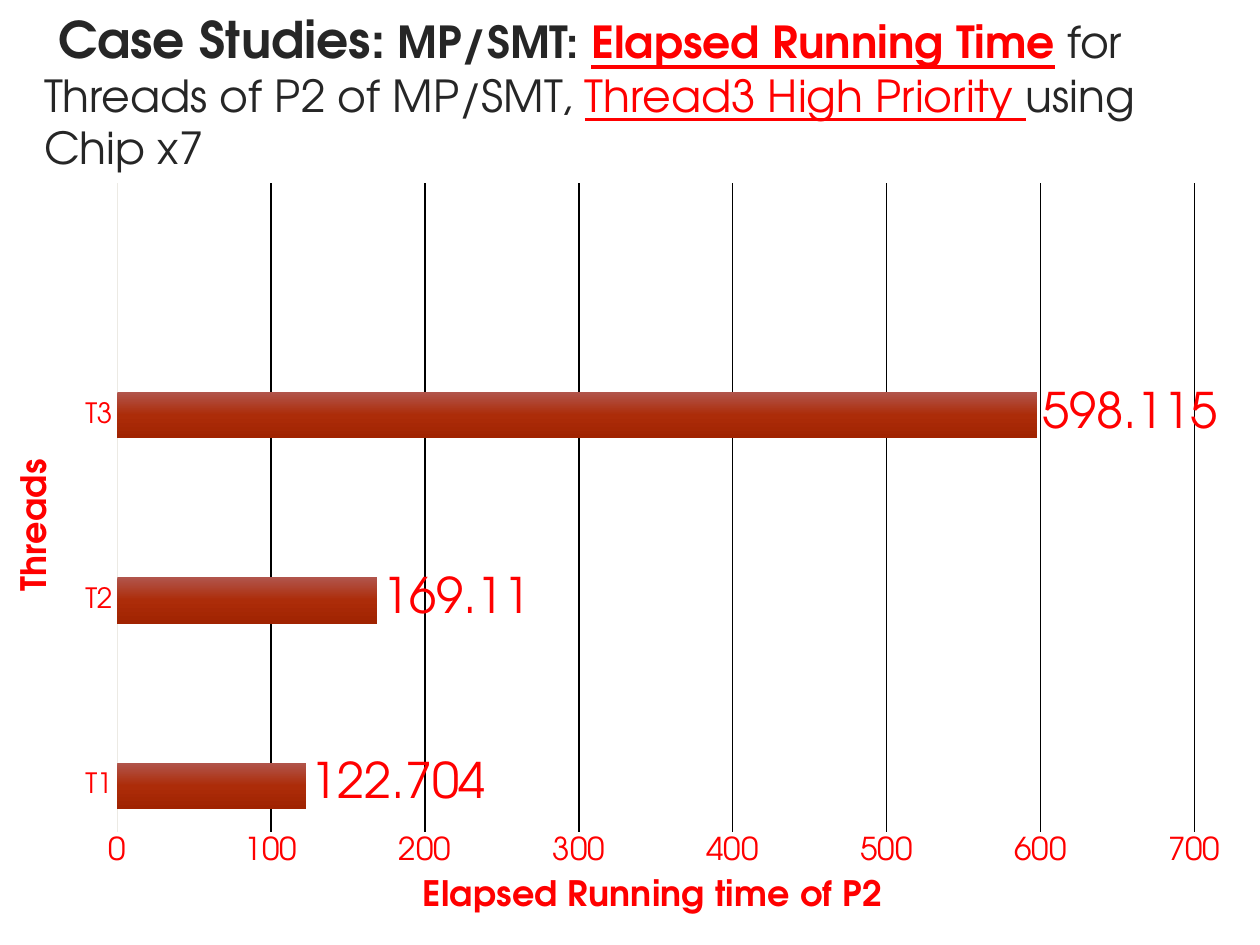
from lxml import etree
from pptx import Presentation
from pptx.chart.data import CategoryChartData
from pptx.dml.color import RGBColor
from pptx.enum import chart as ch, text
from pptx.oxml import parse_xml
from pptx.oxml.ns import nsdecls, qn
from pptx.util import Inches, Pt

FONT = "TeX Gyre Adventor"
RED = RGBColor(0xFF, 0, 0)
DARK = RGBColor(0x26, 0x26, 0x26)
BLACK = RGBColor(0, 0, 0)
AXIS = RGBColor(0xEC, 0xEA, 0xE4)
GRADIENT = [(0, "B1554C"), (50, "AC2C09"), (100, "A02301")]

TITLE = [
    (" Case Studies:", dict(size=Pt(28.8), bold=True, color=DARK)),
    (" MP/SMT: ", dict(bold=True, color=DARK)),
    ("Elapsed Running Time", dict(bold=True, underline=True, color=RED)),
    (" for\vThreads of P2 of MP/SMT, ", dict(color=DARK)),
    ("Thread3 High Priority ", dict(underline=True, color=RED)),
    ("using Chip x7", dict(color=DARK)),
]
THREADS = [("T1", 122.704), ("", None), ("T2", 169.11), ("", None),
           ("T3", 598.115), ("", None), ("", None)]
AXIS_TITLES = ("Threads", "Elapsed Running time of P2")
AXIS_SIZES = (16, 18)
PLOT = dict(x=0.088, y=0.034, w=0.884, h=0.847)


def style(font, size=Pt(25.2), color=BLACK, bold=False, underline=False):
    values = dict(name=FONT, size=size, bold=bold, underline=underline)
    for key, value in values.items():
        setattr(font, key, value)
    font.color.rgb = color


def add_title(s):
    sp = s.shapes.title
    sp.left, sp.top, sp.width, sp.height = map(Inches, (0.25, 0.08, 9.75, 1.5))
    tf = sp.text_frame
    for key, value in dict(word_wrap=True, auto_size=text.MSO_AUTO_SIZE.NONE,
                           vertical_anchor=text.MSO_ANCHOR.TOP).items():
        setattr(tf, key, value)
    p = tf.paragraphs[0]
    p.alignment = text.PP_ALIGN.LEFT
    p.line_spacing = Pt(30)
    for content, look in TITLE:
        for i, part in enumerate(content.split("\v")):
            if i:
                p.add_line_break()
            r = p.add_run()
            r.text = part
            style(r.font, **look)


def add_bars(s):
    data = CategoryChartData()
    data.categories = [name for name, _ in THREADS]
    data.add_series("Series 1", [value for _, value in THREADS])
    chart = s.shapes.add_chart(ch.XL_CHART_TYPE.BAR_CLUSTERED,
                               *map(Inches, (0.08, 1.25, 9.67, 6.08)), data).chart
    chart.has_legend = chart.has_title = False
    style(chart.font, Pt(10))

    axes = (chart.category_axis, chart.value_axis)
    for axis, title, size in zip(axes, AXIS_TITLES, AXIS_SIZES):
        axis.major_tick_mark = axis.minor_tick_mark = ch.XL_TICK_MARK.NONE
        style(axis.tick_labels.font, Pt(size), RED)
        tf = axis.axis_title.text_frame
        tf.text = title
        style(tf.paragraphs[0].runs[0].font, Pt(20), RED, bold=True)
    cat, val = axes
    cat.format.line.color.rgb = AXIS
    cat.format.line.width = Pt(0.75)
    val.format.line.fill.background()
    val.minimum_scale, val.maximum_scale, val.major_unit = 0, 700, 100
    grid = val.major_gridlines.format.line
    grid.color.rgb, grid.width = BLACK, Pt(0.75)

    plot = chart.plots[0]
    plot.gap_width, plot.vary_by_categories = 100, False
    plot.has_data_labels = True
    labels = plot.data_labels
    labels.show_value = True
    labels.position = ch.XL_LABEL_POSITION.OUTSIDE_END
    style(labels.font, Pt(28), RED)

    stops = "".join(f'<a:gs pos="{pos * 1000}"><a:srgbClr val="{color}"/></a:gs>'
                    for pos, color in GRADIENT)
    fill = parse_xml(f'<a:gradFill {nsdecls("a")}><a:gsLst>{stops}</a:gsLst>'
                     '<a:lin ang="5400000" scaled="0"/></a:gradFill>')
    series = plot.series[0]
    series.invert_if_negative = False
    series.format.line.fill.background()
    series.format.line._ln.addprevious(fill)

    area = chart._chartSpace.chart.plotArea
    for old in area.findall(qn("c:layout")):
        area.remove(old)
    layout = etree.Element(qn("c:layout"))
    manual = etree.SubElement(layout, qn("c:manualLayout"))
    settings = dict(layoutTarget="inner", xMode="edge", yMode="edge", **PLOT)
    for key, value in settings.items():
        etree.SubElement(manual, qn(f"c:{key}")).set("val", str(value))
    area.insert(0, layout)


def main():
    prs = Presentation()
    prs.slide_width, prs.slide_height = Inches(10), Inches(7.5)
    s = prs.slides.add_slide(prs.slide_layouts[5])
    add_title(s)
    add_bars(s)
    prs.save("out.pptx")


if __name__ == "__main__":
    main()
